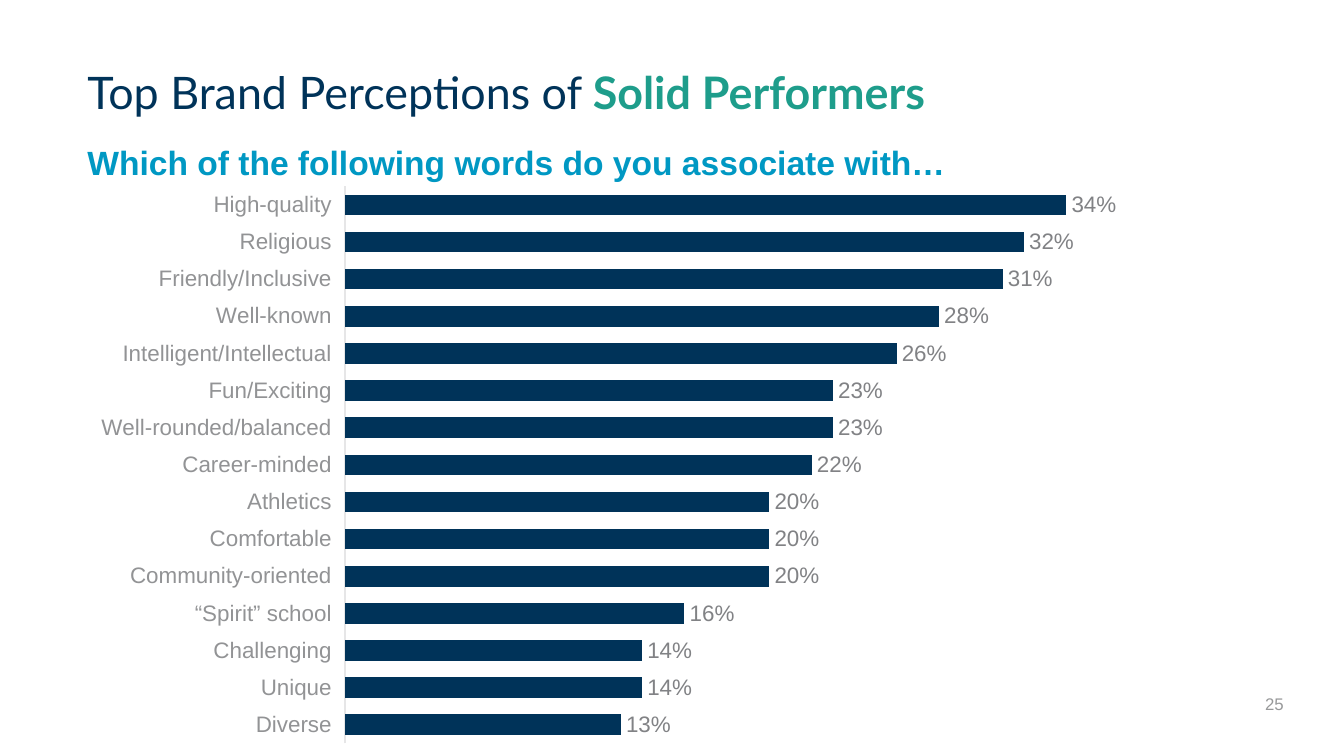
from lxml.etree import SubElement
from pptx import Presentation
from pptx.chart.data import CategoryChartData
from pptx.dml.color import RGBColor
from pptx.enum.chart import XL_CHART_TYPE, XL_LABEL_POSITION, XL_TICK_LABEL_POSITION, XL_TICK_MARK
from pptx.enum.text import MSO_ANCHOR, MSO_AUTO_SIZE, PP_ALIGN
from pptx.oxml import parse_xml
from pptx.oxml.ns import nsdecls, qn
from pptx.util import Pt

NAVY, TEAL, BLUE = "003359", "1E9D8B", "0098C3"
PERCEPTIONS = {
    "High-quality": 0.34,
    "Religious": 0.32,
    "Friendly/Inclusive": 0.31,
    "Well-known": 0.28,
    "Intelligent/Intellectual": 0.26,
    "Fun/Exciting": 0.23,
    "Well-rounded/balanced": 0.23,
    "Career-minded": 0.22,
    "Athletics": 0.2,
    "Comfortable": 0.2,
    "Community-oriented": 0.2,
    "“Spirit” school": 0.16,
    "Challenging": 0.14,
    "Unique": 0.14,
    "Diverse": 0.13,
}


def color(value):
    """Turn a hex string into a colour."""
    return RGBColor.from_string(value)


class SlideBuilder:
    """Hold the style and the current slide."""

    heading_font = "Lato"
    body_font = "Arial"

    def __init__(self, slide):
        """Keep the slide that receives the elements."""
        self.slide = slide

    def style(self, font, size, fill, name=body_font, bold=False):
        """Set the look of a font."""
        font.name, font.size, font.bold = name, Pt(size), bold
        font.color.rgb = color(fill)

    def frame(self, box, place, anchor, insets):
        """Place a box and return its first paragraph."""
        box.left, box.top, box.width, box.height = (Pt(length) for length in place)
        frame = box.text_frame
        frame.word_wrap = True
        frame.auto_size = MSO_AUTO_SIZE.NONE
        frame.vertical_anchor = anchor
        frame.margin_left = frame.margin_right = Pt(7.2)
        frame.margin_top = frame.margin_bottom = Pt(insets)
        return frame.paragraphs[0]

    def title(self, plain, accent, place):
        """Fill the title with plain words and accented ones."""
        para = self.frame(self.slide.shapes.title, place, MSO_ANCHOR.BOTTOM, 7.2)
        para.alignment = PP_ALIGN.LEFT
        para.line_spacing = 0.9
        for words, fill, bold in ((plain, NAVY, False), (accent, TEAL, True)):
            span = para.add_run()
            span.text = words
            self.style(span.font, 24, fill, self.heading_font, bold)

    def question(self, words, place):
        """Fill the body placeholder with one unbulleted line."""
        para = self.frame(self.slide.placeholders[1], place, MSO_ANCHOR.TOP, 7.2)
        para.text = words
        properties = para._p.get_or_add_pPr()
        properties.set("marL", "0")
        properties.set("indent", "0")
        SubElement(properties, qn("a:buNone"))
        para.line_spacing = 0.9
        para.space_before = Pt(0)
        self.style(para.font, 18, BLUE, bold=True)

    def page_number(self, number, place):
        """Add the page number."""
        box = self.slide.shapes.add_textbox(0, 0, 0, 0)
        para = self.frame(box, place, MSO_ANCHOR.MIDDLE, 3.6)
        para.text = str(number)
        para.alignment = PP_ALIGN.RIGHT
        self.style(para.font, 9, "98999A")

    def bar_chart(self, values, place, plot):
        """Add a horizontal bar chart with labelled bars."""
        data = CategoryChartData(number_format="0%")
        data.categories = list(values)
        data.add_series("Series 1", list(values.values()))
        chart = self.slide.shapes.add_chart(
            XL_CHART_TYPE.BAR_CLUSTERED, *(Pt(length) for length in place), data
        ).chart
        chart.has_title = chart.has_legend = False
        self.style(chart.font, 10, "58595B")
        self.bars(chart.plots[0])
        self.axes(chart)
        self.plot_area(chart, plot)

    def bars(self, plot):
        """Format the bars and their labels."""
        plot.gap_width = 80
        plot.vary_by_categories = False
        series = plot.series[0]
        series.format.fill.solid()
        series.format.fill.fore_color.rgb = color(NAVY)
        series.invert_if_negative = False
        labels = series.data_labels
        labels.show_value = True
        labels.number_format = "0%"
        labels.number_format_is_linked = False
        labels.position = XL_LABEL_POSITION.OUTSIDE_END
        self.style(labels.font, 12, "818285")

    def axes(self, chart):
        """Format the word axis and hide the value axis."""
        words = chart.category_axis
        words.reverse_order = True
        words.has_major_gridlines = False
        words.major_tick_mark = words.minor_tick_mark = XL_TICK_MARK.NONE
        words.tick_label_position = XL_TICK_LABEL_POSITION.LOW
        words.format.line.color.rgb = color("E6E6E7")
        words.format.line.width = Pt(0.75)
        self.style(words.tick_labels.font, 12, "929395")
        shares = chart.value_axis
        shares.minimum_scale, shares.maximum_scale = 0, 0.4
        shares.has_major_gridlines = False
        shares.visible = False

    def plot_area(self, chart, plot):
        """Fix the inner plot area as fractions of the chart."""
        area = chart._chartSpace.chart.plotArea
        for layout in area.findall(qn("c:layout")):
            area.remove(layout)
        sizes = "".join(f'<c:{key} val="{value}"/>' for key, value in zip("xywh", plot))
        area.insert(0, parse_xml(
            f'<c:layout {nsdecls("c")}><c:manualLayout><c:layoutTarget val="inner"/>'
            f'<c:xMode val="edge"/><c:yMode val="edge"/>{sizes}</c:manualLayout></c:layout>'
        ))


def main():
    """Build and save the slide."""
    deck = Presentation()
    deck.slide_width, deck.slide_height = Pt(720), Pt(405)
    builder = SlideBuilder(deck.slides.add_slide(deck.slide_layouts[1]))
    builder.page_number(25, (532.8, 366.5, 162, 21.6))
    builder.title("Top Brand Perceptions of ", "Solid Performers", (39.6, 12.2, 560.9, 59))
    builder.question("Which of the following words do you associate with…", (39.6, 71.3, 625, 28))
    builder.bar_chart(PERCEPTIONS, (45.4, 93.6, 606.2, 311), (0.23, 0.02, 0.75, 0.96))
    deck.save("out.pptx")


if __name__ == "__main__":
    main()
